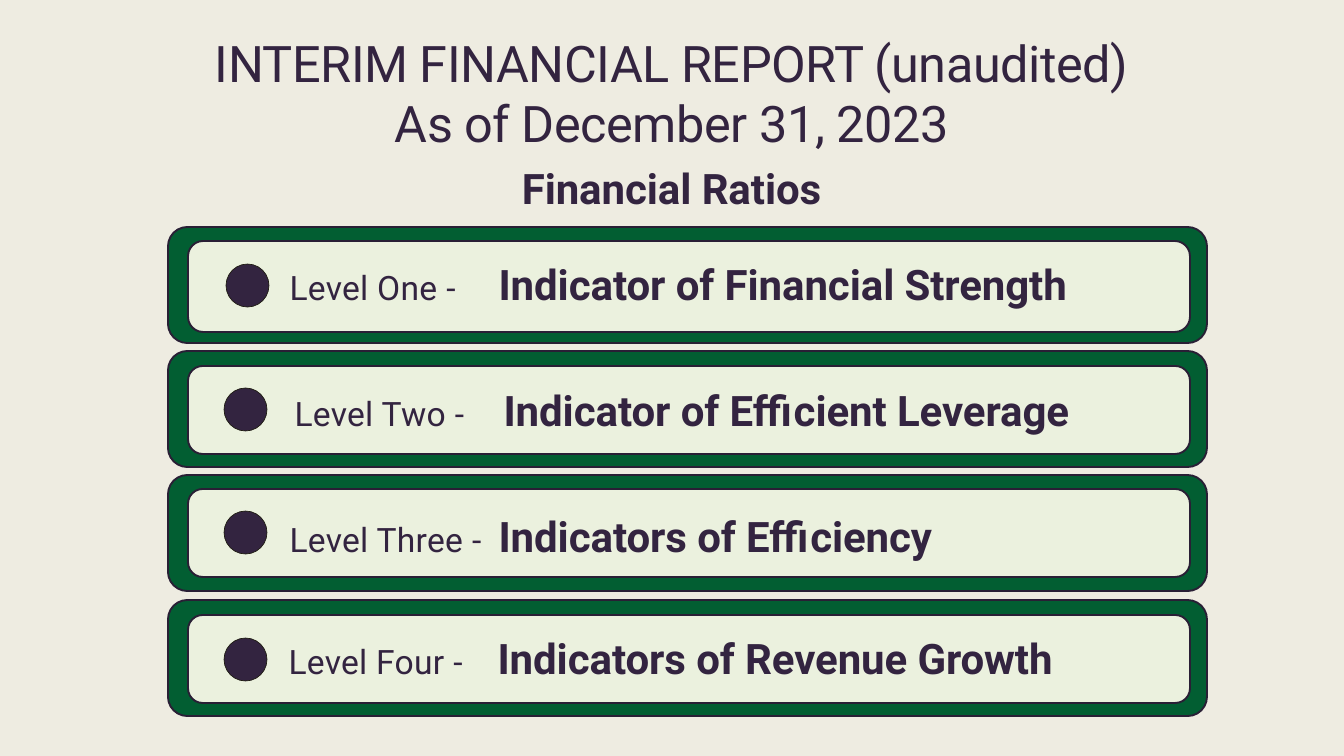
import pptx
import pptx.dml.color
import pptx.enum.shapes
import pptx.enum.text
import pptx.oxml.ns
import pptx.util
from lxml import etree

EMU_PER_PX = 914400 / 67.2
COLORS = {
    "background": "EEECE1",
    "frame": "025E32",
    "panel": "EBF1DE",
    "outline": "291F35",
    "ink": "332440",
    "dot_edge": "1E1C11",
}
SHAPES = pptx.enum.shapes.MSO_SHAPE
LEVELS = [
    ("One", "Indicator of Financial Strength", 241, 91, 226, 264, 283, 255),
    ("Two", "Indicator of Efficient Leverage", 366, 88, 224, 388, 288, 381),
    ("Three", "Indicators of Efficiency", 489, 88, 224, 511, 283, 507),
    ("Four", "Indicators of Revenue Growth", 615, 88, 224, 638, 282, 629),
]


def px(length):
    return pptx.util.Emu(round(length * EMU_PER_PX))


def rgb(name):
    return pptx.dml.color.RGBColor.from_string(COLORS[name])


def add_run(paragraph, text, size=36, bold=False, spacing=0, color="ink", font="Roboto"):
    run = paragraph.add_run()
    run.text = text
    run.font.name = font
    run.font.size = pptx.util.Pt(size)
    run.font.bold = bold
    run.font.color.rgb = rgb(color)
    run.font._element.set("spc", str(round(spacing * 100)))


class SlideBuilder:
    def __init__(self, slide):
        self.slide = slide
        slide.background.fill.solid()
        slide.background.fill.fore_color.rgb = rgb("background")

    def shape(self, kind, left, top, width, height, fill, line, weight):
        shape = self.slide.shapes.add_shape(kind, px(left), px(top), px(width), px(height))
        shape.shadow.inherit = False
        shape.fill.solid()
        shape.fill.fore_color.rgb = rgb(fill)
        shape.line.color.rgb = rgb(line)
        shape.line.width = pptx.util.Pt(weight)

    def box(self, left, top, width, height, fill):
        self.shape(SHAPES.ROUNDED_RECTANGLE, left, top, width, height, fill, "outline", 2)

    def dot(self, left, top):
        self.shape(SHAPES.OVAL, left, top, 43, 43, "ink", "dot_edge", 0.75)

    def title(self, lines, subtitle):
        title = self.slide.shapes.title
        title.left, title.top, title.width, title.height = px(168), px(27), px(1007), px(184)
        frame = title.text_frame
        frame.word_wrap = True
        frame.auto_size = pptx.enum.text.MSO_AUTO_SIZE.NONE
        frame.vertical_anchor = pptx.enum.text.MSO_ANCHOR.TOP
        frame.margin_left = frame.margin_right = frame.margin_bottom = 0
        frame.margin_top = px(5)
        heading = frame.paragraphs[0]
        for index, line in enumerate(lines):
            if index:
                heading.add_line_break()
            add_run(heading, line, size=54, spacing=-0.5)
        ratios = frame.add_paragraph()
        ratios.space_before = pptx.util.Pt(10)
        add_run(ratios, subtitle, size=45, bold=True, spacing=-0.1)
        for paragraph in frame.paragraphs:
            paragraph.alignment = pptx.enum.text.PP_ALIGN.CENTER

    def level_text(self, left, top, level, indicator):
        shape = self.slide.shapes.add_textbox(px(left), px(top), px(900), px(58))
        shape.text_frame.word_wrap = True
        paragraph = shape.text_frame.paragraphs[0]
        paragraph.space_before = pptx.util.Pt(3)
        qn = pptx.oxml.ns.qn
        tabs = etree.SubElement(paragraph._p.get_or_add_pPr(), qn("a:tabLst"))
        etree.SubElement(tabs, qn("a:tab"), pos=str(px(209)), algn="l")
        add_run(paragraph, f"Level {level} ", spacing=0.3)
        add_run(paragraph, "-\t")
        add_run(paragraph, indicator, size=45, bold=True, spacing=-0.1)


def main():
    presentation = pptx.Presentation()
    presentation.slide_width = px(1344)
    presentation.slide_height = px(756)
    builder = SlideBuilder(presentation.slides.add_slide(presentation.slide_layouts[5]))
    builder.title(
        ["INTERIM FINANCIAL REPORT (unaudited)", "As of December 31, 2023"],
        "Financial Ratios",
    )
    for row, level in enumerate(LEVELS):
        name, indicator, panel_top, panel_height, dot_left, dot_top, text_left, text_top = level
        builder.box(168, 227 + row * 373 // 3, 1039, 116, "frame")
        builder.box(188, panel_top, 1002, panel_height, "panel")
        builder.dot(dot_left, dot_top)
        builder.level_text(text_left, text_top, name, indicator)
    presentation.save("out.pptx")


if __name__ == "__main__":
    main()
